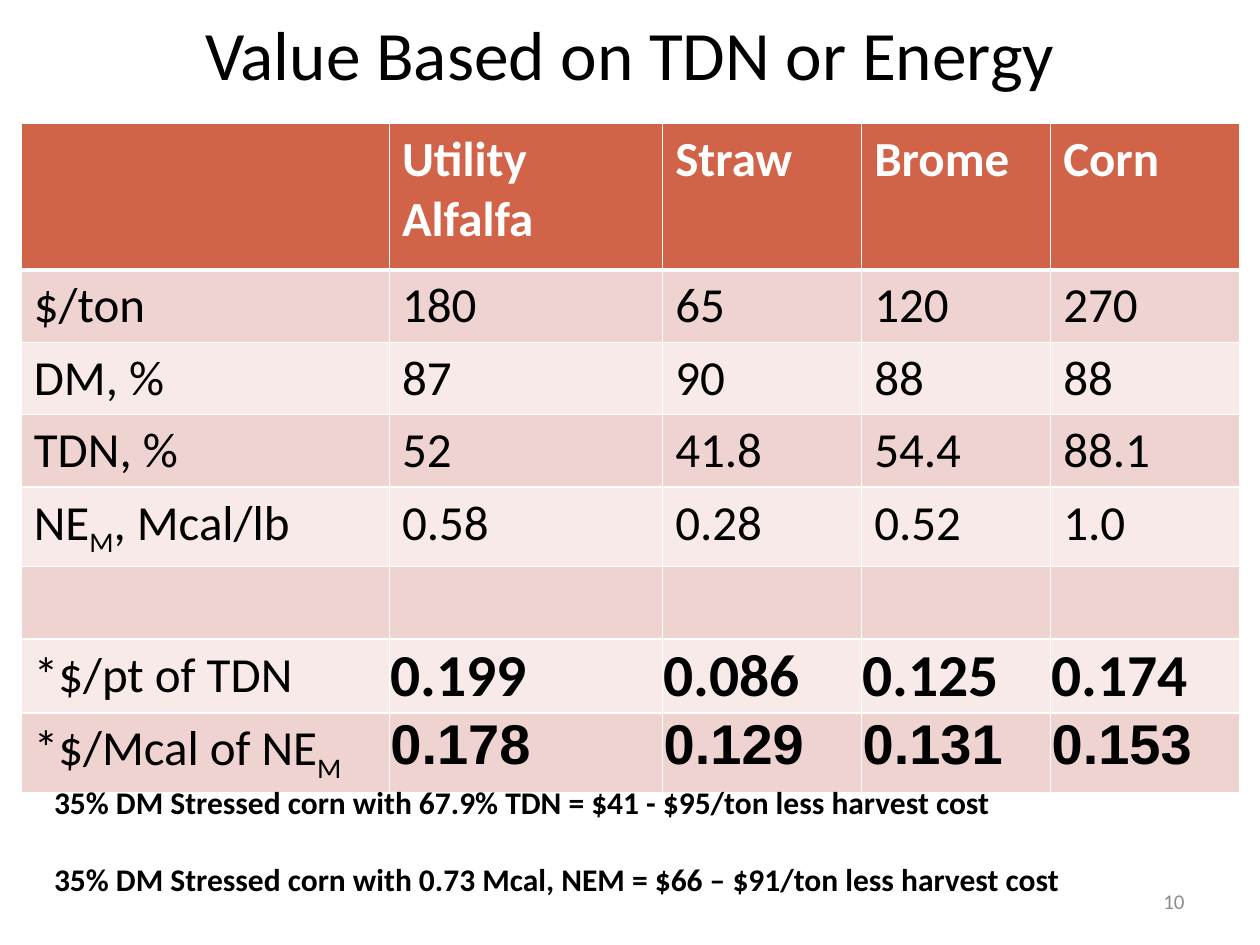
from lxml import etree
from pptx import Presentation
from pptx.dml.color import RGBColor
from pptx.enum.text import MSO_ANCHOR, PP_ALIGN
from pptx.oxml.ns import qn
from pptx.util import Cm, Pt

LEFT, CENTER, RIGHT = PP_ALIGN.LEFT, PP_ALIGN.CENTER, PP_ALIGN.RIGHT
TOP, MIDDLE = MSO_ANCHOR.TOP, MSO_ANCHOR.MIDDLE

COLUMN_WIDTHS = [7.42, 5.51, 4.01, 3.81, 3.81]
ROW_HEIGHTS = [2.95, 1.46, 1.46, 1.46, 1.6, 1.46, 1.49, 1.6]
# A label is a list of runs; every second run is a subscript
ROWS = [
    ([""], ["Utility Alfalfa", "Straw", "Brome", "Corn"]),
    (["$/ton"], ["180", "65", "120", "270"]),
    (["DM, %"], ["87", "90", "88", "88"]),
    (["TDN, %"], ["52", "41.8", "54.4", "88.1"]),
    (["NE", "M", ", Mcal/lb"], ["0.58", "0.28", "0.52", "1.0"]),
    ([""], [""] * 4),
    (["*$/pt of TDN"], ["0.199", "0.086", "0.125", "0.174"]),
    (["*$/Mcal of NE", "M"], ["0.178", "0.129", "0.131", "0.153"]),
]
# Result rows: font, size and anchor of the values
RESULTS = {6: ("Calibri", 34, MIDDLE), 7: ("Arial", 32, TOP)}


def color(value):
    return RGBColor.from_string(value)


class SlideBuilder:
    font = "Calibri"
    black, white, gray = "000000", "FFFFFF", "8C8C8C"
    header_fill = "D16349"
    band_fills = ("F7EAE9", "EED3D0")

    def __init__(self, slide):
        self.slide = slide

    def run(self, paragraph, text, size, fill=black, bold=False, font=font, subscript=False):
        run = paragraph.add_run()
        run.text = text
        run.font.name = font
        run.font.size = Pt(size)
        run.font.bold = bold
        run.font.color.rgb = color(fill)
        if subscript:
            run.font._element.set("baseline", "-25000")

    def text(self, box, lines, size, align=LEFT, anchor=TOP, gap=0, **style):
        shape = self.slide.shapes.add_textbox(*map(Cm, box))
        frame = shape.text_frame
        frame.word_wrap = True
        frame.vertical_anchor = anchor
        for index, line in enumerate(lines):
            paragraph = frame.add_paragraph() if index else frame.paragraphs[0]
            paragraph.alignment = align
            if index:
                paragraph.space_before = Pt(gap)
            self.run(paragraph, line, size, **style)

    def borders(self, cell, row):
        properties = cell._tc.get_or_add_tcPr()
        thick = {"lnB": row == 0, "lnT": row == 1}
        for index, side in enumerate(("lnL", "lnR", "lnT", "lnB")):
            width = 3 if thick.get(side) else 1
            line = etree.Element(qn(f"a:{side}"), w=str(Pt(width)))
            fill = etree.SubElement(line, qn("a:solidFill"))
            etree.SubElement(fill, qn("a:srgbClr"), val=self.white)
            properties.insert(index, line)

    def cell(self, cell, row, parts, is_value):
        cell.fill.solid()
        cell.fill.fore_color.rgb = color(self.band_fills[row % 2] if row else self.header_fill)
        self.borders(cell, row)
        font, size, bold = self.font, 28, row == 0
        if is_value and row in RESULTS:
            font, size, cell.vertical_anchor = RESULTS[row]
            bold = True
            cell.margin_left = cell.margin_right = cell.margin_top = Cm(0.02)
            cell.margin_bottom = 0
        for index, part in enumerate(parts):
            if part:
                self.run(cell.text_frame.paragraphs[0], part, size,
                         self.black if row else self.white, bold, font, index % 2 == 1)

    def table(self, left, top, widths, heights, rows):
        frame = self.slide.shapes.add_table(
            len(heights), len(widths), Cm(left), Cm(top), Cm(sum(widths)), Cm(sum(heights)))
        table = frame.table
        for column, width in zip(table.columns, widths):
            column.width = Cm(width)
        for index, (label, values) in enumerate(rows):
            table.rows[index].height = Cm(heights[index])
            self.cell(table.cell(index, 0), index, label, False)
            for column, value in enumerate(values, 1):
                self.cell(table.cell(index, column), index, [value], True)


def main():
    presentation = Presentation()
    presentation.slide_width, presentation.slide_height = Cm(25.4), Cm(19.05)
    builder = SlideBuilder(presentation.slides.add_slide(presentation.slide_layouts[6]))

    # Title
    builder.text((1.27, 0.08, 22.86, 1.98), ["Value Based on TDN or Energy"], 39.6, CENTER, MIDDLE)

    # Feed value table
    builder.table(0.43, 2.49, COLUMN_WIDTHS, ROW_HEIGHTS, ROWS)

    # Slide number
    builder.text((18.21, 17.65, 5.92, 1.02), ["10"], 12, RIGHT, MIDDLE, fill=builder.gray)

    # Notes on stressed corn
    builder.text((0.84, 15.67, 22.23, 2.57), [
        "35% DM Stressed corn with 67.9% TDN = $41 - $95/ton less harvest cost",
        "35% DM Stressed corn with 0.73 Mcal, NEM = $66 – $91/ton less harvest cost",
    ], 18, gap=22, bold=True)

    presentation.save("out.pptx")


if __name__ == "__main__":
    main()
